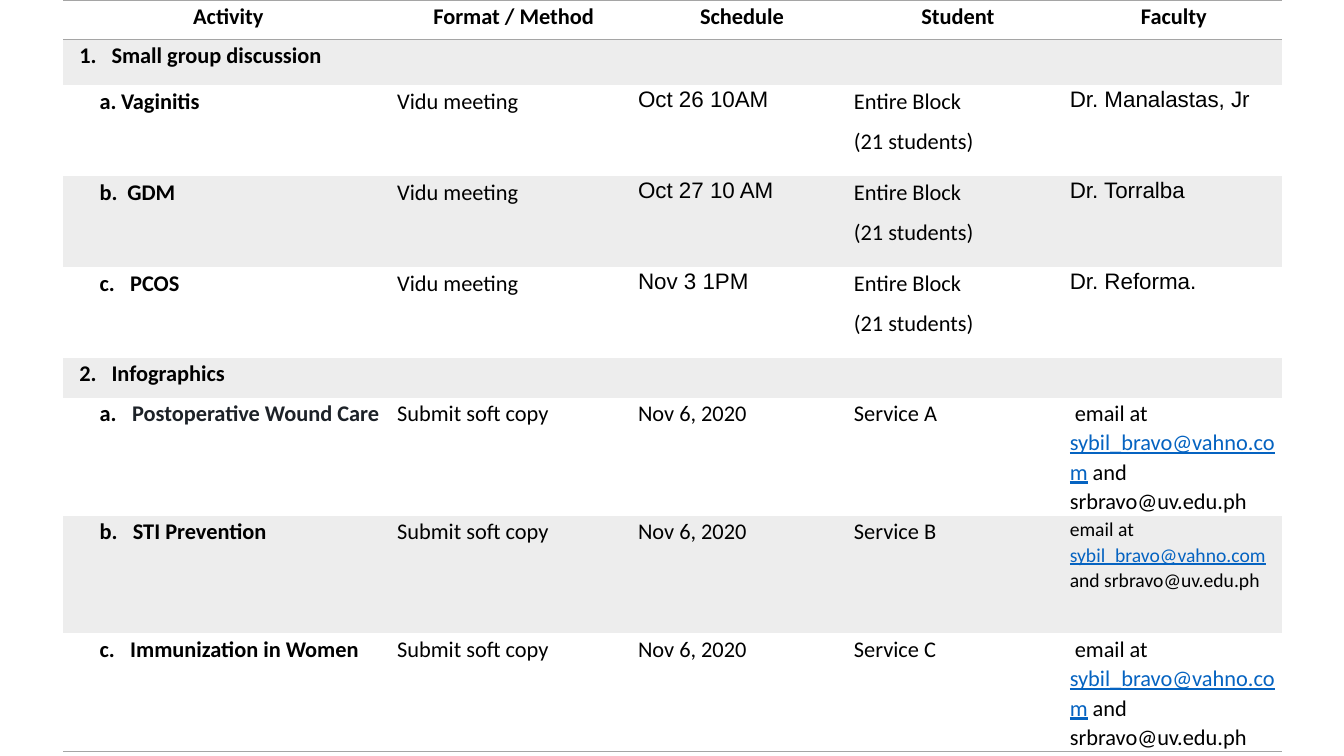
from dataclasses import dataclass

from lxml.etree import SubElement
from pptx import Presentation
from pptx.dml.color import RGBColor as Rgb
from pptx.enum.text import PP_ALIGN as Align
from pptx.oxml.ns import qn
from pptx.util import Cm, Pt


@dataclass(frozen=True)
class Theme:
    ink: str = "000000"
    slate: str = "1D2228"
    link: str = "0563C1"
    rule: str = "A5A5A5"
    band: str = "EDEDED"
    font: str = "Calibri"
    alt: str = "Arial"
    size: int = 16
    small: int = 14


THEME = Theme()
PLAIN = "{2D5ABB26-0587-4C30-8999-92F81FD0307C}"  # No Style, No Grid
WIDTHS = (8.31, 6.07, 5.44, 5.44, 5.44)
HEADS = ("Activity", "Format / Method", "Schedule", "Student", "Faculty")
TALKS = (  # mark, topic, hanging indent, date, faculty
    ("a.", "Vaginitis", 0.54, "Oct 26 10AM", "Dr. Manalastas, Jr"),
    ("b.", "GDM", 0.7, "Oct 27 10 AM", "Dr. Torralba"),
    ("c.", "PCOS", 0.77, "Nov 3 1PM", "Dr. Reforma."),
)
POSTERS = (  # mark, topic, hanging indent, group, topic colour, mail size, lead
    ("a.", "Postoperative Wound Care", 0.82, "Service A", THEME.slate, THEME.size, " email at "),
    ("b.", "STI Prevention", 0.84, "Service B", THEME.ink, THEME.small, "email at "),
    ("c.", "Immunization in Women", 0.77, "Service C", THEME.ink, THEME.size, " email at "),
)
HEIGHTS = (1, 1.15) + (2.29,) * len(TALKS) + (1,) + (2.97,) * len(POSTERS)


def style(run, size=THEME.size, font=THEME.font, color=THEME.ink, bold=False):
    run.font.size, run.font.name, run.font.bold = Pt(size), font, bold
    run.font.color.rgb = Rgb.from_string(color)
    run.font.underline = color == THEME.link


def space(para):
    para.line_spacing = 1.07
    para.space_after = Pt(8)


def write(cell, text, align=Align.LEFT, **look):
    cell.text_frame.text = text
    for para in cell.text_frame.paragraphs:
        space(para)
        para.alignment = align
        for run in para.runs:
            style(run, **look)


def label(cell, mark, topic, left, hang, color=THEME.ink):
    """Write a bold mark, then its topic at the hanging indent."""
    para = cell.text_frame.paragraphs[0]
    space(para)
    for text, tint in ((mark + "\t", THEME.ink), (topic, color)):
        run = para.add_run()
        run.text = text
        style(run, color=tint, bold=True)
    props = para.runs[0].font and para._p.get_or_add_pPr()
    props.set("marL", str(Cm(left + hang)))
    props.set("indent", str(-Cm(hang)))


def mail(cell, lead, size):
    para = cell.text_frame.paragraphs[0]
    space(para)
    parts = (
        (lead, THEME.ink),
        ("sybil_bravo@vahno.com", THEME.link),
        (" and srbravo@uv.edu.ph", THEME.ink),
    )
    for text, color in parts:
        run = para.add_run()
        run.text = text
        style(run, size=size, color=color)


def border(cell, *sides):
    props = cell._tc.get_or_add_tcPr()
    for spot, side in enumerate(sides):
        line = SubElement(props, qn("a:" + side), w=str(Pt(1)))
        fill = SubElement(line, qn("a:solidFill"))
        SubElement(fill, qn("a:srgbClr"), val=THEME.rule)
        props.insert(spot, line)


def base(table):
    """Set sizes, margins, bands and rules before any text goes in."""
    for col, wide in zip(table.columns, WIDTHS):
        col.width = Cm(wide)
    last = len(HEIGHTS) - 1
    for num, (row, high) in enumerate(zip(table.rows, HEIGHTS)):
        row.height = Cm(high)
        for cell in row.cells:
            cell.margin_left = cell.margin_right = Cm(0.1)
            cell.margin_top, cell.margin_bottom = Cm(0.02), 0
            if num % 2:
                cell.fill.solid()
                cell.fill.fore_color.rgb = Rgb.from_string(THEME.band)
            else:
                cell.fill.background()
            if num == 0:
                border(cell, "lnT", "lnB")
            elif num == last:
                border(cell, "lnB")


def section(cells, mark, topic):
    cells[0].merge(cells[-1])
    label(cells[0], mark, topic, 0.3, 0.81)


def talk(cells, mark, topic, hang, date, host):
    label(cells[0], mark, topic, 0.81, hang)
    write(cells[1], "Vidu meeting")
    write(cells[2], date, font=THEME.alt)
    write(cells[3], "Entire Block\n(21 students)")
    write(cells[4], host, font=THEME.alt)


def poster(cells, mark, topic, hang, group, color, size, lead):
    label(cells[0], mark, topic, 0.81, hang, color)
    write(cells[1], "Submit soft copy")
    write(cells[2], "Nov 6, 2020")
    write(cells[3], group)
    mail(cells[4], lead, size)


def plan(slide, left, top):
    frame = slide.shapes.add_table(
        len(HEIGHTS), len(WIDTHS), Cm(left), Cm(top), Cm(sum(WIDTHS)), Cm(sum(HEIGHTS))
    )
    frame.element.xpath(".//a:tableStyleId")[0].text = PLAIN
    table = frame.table
    table.first_row = table.horz_banding = False
    base(table)
    rows = iter([list(row.cells) for row in table.rows])
    for cell, head in zip(next(rows), HEADS):
        write(cell, head, Align.CENTER, bold=True)
    section(next(rows), "1.", "Small group discussion")
    for item in TALKS:
        talk(next(rows), *item)
    section(next(rows), "2.", "Infographics")
    for item in POSTERS:
        poster(next(rows), *item)


def main():
    deck = Presentation()
    deck.slide_width, deck.slide_height = Cm(33.87), Cm(19.05)
    slide = deck.slides.add_slide(deck.slide_layouts[6])
    plan(slide, 1.6, 0)
    deck.save("out.pptx")


if __name__ == "__main__":
    main()
